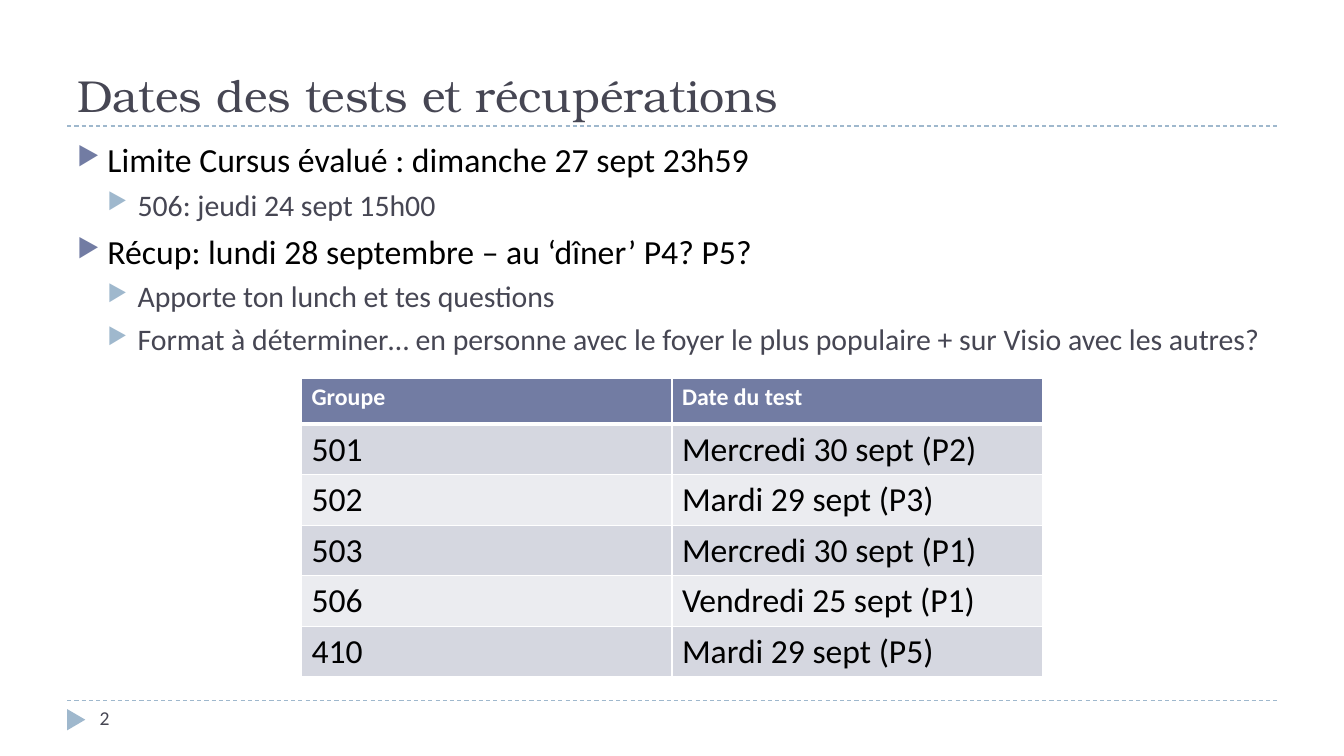
from dataclasses import dataclass

from lxml import etree
from pptx import Presentation
from pptx import util as u
from pptx.dml.color import RGBColor
from pptx.enum import dml, shapes, text
from pptx.oxml import ns

BODY, SERIF = "Calibri", "TeX Gyre Bonum"
INK, BLACK, WHITE = "464653", "000000", "FFFFFF"
INDIGO, SKY = "727CA3", "9FB8CD"
BANDS = ("D5D7E0", "EBECF0")
WIDE, HIGH = u.Inches(13.333), u.Inches(7.5)


@dataclass
class Box:
    """Place and size, in percent of the slide's width and height."""
    left: float
    top: float
    width: float
    height: float

    def emu(self) -> tuple:
        return across(self.left), down(self.top), across(self.width), down(self.height)


@dataclass
class Level:
    size: float
    color: str
    mark: str
    indent: float
    before: float


@dataclass
class Item:
    words: str
    level: int = 0


LEVELS = (Level(24.1, BLACK, INDIGO, 0.3, 6), Level(21.3, INK, SKY, 0.6, 5))
ITEMS = (
    Item("Limite Cursus évalué : dimanche 27 sept 23h59"),
    Item("506: jeudi 24 sept 15h00", 1),
    Item("Récup: lundi 28 septembre – au ‘dîner’ P4? P5?"),
    Item("Apporte ton lunch et tes questions", 1),
    Item("Format à déterminer… en personne avec le foyer le plus populaire"
         " + sur Visio avec les autres?", 1),
)
TESTS = (
    ("Groupe", "Date du test"),
    ("501", "Mercredi 30 sept (P2)"),
    ("502", "Mardi 29 sept (P3)"),
    ("503", "Mercredi 30 sept (P1)"),
    ("506", "Vendredi 25 sept (P1)"),
    ("410", "Mardi 29 sept (P5)"),
)


def across(share: float) -> int:
    return round(WIDE * share / 100)


def down(share: float) -> int:
    return round(HIGH * share / 100)


def paint(color, code: str) -> None:
    color.rgb = RGBColor.from_string(code)


def fill(thing, code: str) -> None:
    thing.fill.solid()
    paint(thing.fill.fore_color, code)


def style(para, size: float, code: str, face: str = BODY, bold: bool = False) -> None:
    for run in para.runs:
        run.font.size, run.font.name, run.font.bold = u.Pt(size), face, bold
        paint(run.font.color, code)


def add(parent, tag: str, **attrs: str):
    return etree.SubElement(parent, ns.qn(tag), attrs)


def rule(slide, top: float) -> None:
    """Draw a dashed line across the slide."""
    line = slide.shapes.add_connector(
        shapes.MSO_CONNECTOR.STRAIGHT, across(5), down(top), across(95), down(top))
    line.line.width = u.Pt(0.75)
    line.line.dash_style = dml.MSO_LINE.DASH
    paint(line.line.color, SKY)
    add(line._element.spPr, "a:effectLst")


def frame(slide, box: Box):
    area = slide.shapes.add_textbox(*box.emu()).text_frame
    area.word_wrap = True
    return area


def label(slide, box: Box, words: str, size: float, face: str, anchor) -> None:
    area = frame(slide, box)
    area.text = words
    area.vertical_anchor = anchor
    style(area.paragraphs[0], size, INK, face)


def bullet(para, level: Level) -> None:
    props = para._p.get_or_add_pPr()
    props.set("marL", str(u.Inches(level.indent)))
    props.set("indent", str(u.Inches(-0.3)))
    add(add(props, "a:buClr"), "a:srgbClr", val=level.mark)
    add(props, "a:buSzPct", val="76000")
    add(props, "a:buChar", char="▶")


def outline(slide, box: Box, items: tuple) -> None:
    area = frame(slide, box)
    area.text = "\n".join(item.words for item in items)
    for para, item in zip(area.paragraphs, items):
        level = LEVELS[item.level]
        para.level = item.level
        para.space_before = u.Pt(level.before)
        bullet(para, level)
        style(para, level.size, level.color)


def border(cell, head: bool) -> None:
    """Edge a cell in white, with a thick line under the head row."""
    props = cell._tc.get_or_add_tcPr()
    for spot, side in enumerate("LRTB"):
        width = u.Pt(3 if head and side == "B" else 1)
        edge = etree.Element(ns.qn(f"a:ln{side}"), w=str(width))
        add(add(edge, "a:solidFill"), "a:srgbClr", val=WHITE)
        props.insert(spot, edge)


def grid(slide, box: Box, rows: tuple) -> None:
    table = slide.shapes.add_table(len(rows), len(rows[0]), *box.emu()).table
    for r, row in enumerate(rows):
        head = r == 0
        for c, words in enumerate(row):
            cell = table.cell(r, c)
            cell.text = words
            fill(cell, INDIGO if head else BANDS[(r - 1) % 2])
            border(cell, head)
            style(cell.text_frame.paragraphs[0], 17 if head else 24,
                  WHITE if head else BLACK, bold=head)


def arrow(slide, box: Box) -> None:
    mark = slide.shapes.add_shape(shapes.MSO_SHAPE.ISOSCELES_TRIANGLE, *box.emu())
    mark.rotation = 90
    mark.shadow.inherit = False
    mark.line.fill.background()
    fill(mark, SKY)


def main() -> None:
    deck = Presentation()
    deck.slide_width, deck.slide_height = WIDE, HIGH
    slide = deck.slides.add_slide(deck.slide_layouts[6])
    for top in (92.67, 16.67):
        rule(slide, top)
    arrow(slide, Box(4.88, 94, 1.58, 2.4))
    label(slide, Box(5, 2.27, 90, 14.4), "Dates des tests et récupérations",
          32, SERIF, text.MSO_ANCHOR.BOTTOM)
    label(slide, Box(6.68, 92.67, 21.68, 5.33), "2", 14, BODY, text.MSO_ANCHOR.TOP)
    outline(slide, Box(5, 17.73, 90, 31.07), ITEMS)
    grid(slide, Box(22.43, 50, 55.13, 36.8), TESTS)
    deck.save("out.pptx")


if __name__ == "__main__":
    main()
